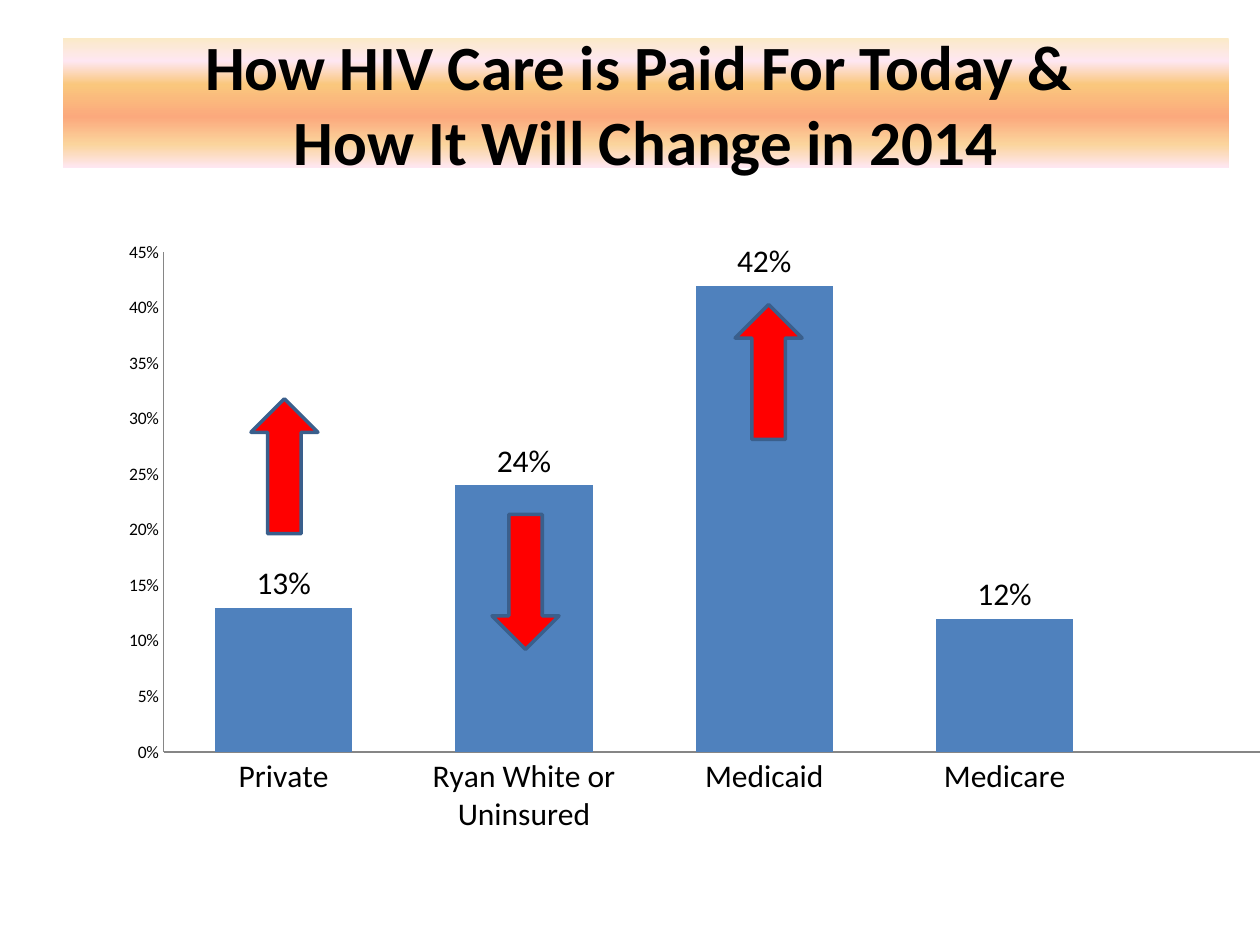
import pptx
import pptx.util
import pptx.chart.data
import pptx.dml.color
import pptx.enum.chart
import pptx.enum.shapes
import pptx.enum.text
import pptx.oxml
import pptx.oxml.ns

Cm = pptx.util.Cm
Pt = pptx.util.Pt
qn = pptx.oxml.ns.qn


def paint(color_format, hex_color):
    color_format.rgb = pptx.dml.color.RGBColor.from_string(hex_color)


deck = pptx.Presentation()
deck.slide_width = Cm(25.4)
deck.slide_height = Cm(19.05)
page = deck.slides.add_slide(deck.slide_layouts[5])

title = page.shapes.title
title.left, title.top, title.width, title.height = Cm(1.27), Cm(0.76), Cm(23.5), Cm(2.62)
title.text_frame.text = "How HIV Care is Paid For Today & \vHow It Will Change in 2014"
title.text_frame.auto_size = pptx.enum.text.MSO_AUTO_SIZE.NONE
title.text_frame.vertical_anchor = pptx.enum.text.MSO_ANCHOR.MIDDLE
para = title.text_frame.paragraphs[0]
para.alignment = pptx.enum.text.PP_ALIGN.CENTER
for span in para.runs:
    span.font.name = "Calibri"
    span.font.size = Pt(36)
    span.font.bold = True
    paint(span.font.color, "000000")

gradient = [(0, "FBEAC7"), (18, "FEE7F2"), (36, "FAC77D"),
            (61, "FBA97D"), (82, "FBD49C"), (100, "FEE7F2")]
title.fill.gradient()
gradient_fill = title._element.spPr.find(qn("a:gradFill"))
stops = "".join(
    f'<a:gs pos="{percent * 1000}"><a:srgbClr val="{color}"/></a:gs>'
    for percent, color in gradient
)
new_fill = pptx.oxml.parse_xml(
    f'<a:gradFill {pptx.oxml.ns.nsdecls("a")} rotWithShape="1"><a:gsLst>{stops}</a:gsLst>'
    '<a:lin ang="5400000" scaled="0"/></a:gradFill>'
)
gradient_fill.getparent().replace(gradient_fill, new_fill)

payers = pptx.chart.data.CategoryChartData(number_format="0%")
payers.categories = ["Private", "Ryan White or Uninsured", "Medicaid", "Medicare", ""]
payers.add_series("Series 1", [0.13, 0.24, 0.42, 0.12, None])
chart = page.shapes.add_chart(
    pptx.enum.chart.XL_CHART_TYPE.COLUMN_CLUSTERED,
    Cm(2.13), Cm(4.7), Cm(25.4), Cm(13.84), payers,
).chart
chart.has_title = False
chart.has_legend = False
chart.font.name = "Calibri"
chart.font.size = Pt(10)
paint(chart.font.color, "000000")

for axis, size in [(chart.category_axis, 18), (chart.value_axis, 10)]:
    axis.has_major_gridlines = False
    axis.major_tick_mark = pptx.enum.chart.XL_TICK_MARK.NONE
    axis.minor_tick_mark = pptx.enum.chart.XL_TICK_MARK.NONE
    axis.tick_labels.font.size = Pt(size)
    axis.format.line.width = Pt(0.75)
    paint(axis.format.line.color, "868686")
chart.value_axis.minimum_scale = 0
chart.value_axis.maximum_scale = 0.45
chart.value_axis.major_unit = 0.05
chart.value_axis.tick_labels.number_format = "0%"
chart.value_axis.tick_labels.number_format_is_linked = False

plot = chart.plots[0]
plot.gap_width = 75
plot.overlap = -9
plot.vary_by_categories = False
bars = plot.series[0]
bars.format.fill.solid()
paint(bars.format.fill.fore_color, "4F81BD")
labels = bars.data_labels
labels.show_value = True
labels.number_format = "0%"
labels.number_format_is_linked = False
labels.position = pptx.enum.chart.XL_LABEL_POSITION.OUTSIDE_END
labels.font.size = Pt(18)

plot_area = chart._chartSpace.chart.plotArea
for old_layout in plot_area.findall(qn("c:layout")):
    plot_area.remove(old_layout)
plot_area.insert(0, pptx.oxml.parse_xml(
    f'<c:layout {pptx.oxml.ns.nsdecls("c")}><c:manualLayout><c:layoutTarget val="inner"/>'
    '<c:xMode val="edge"/><c:yMode val="edge"/><c:x val="0.046"/><c:y val="0.028"/>'
    '<c:w val="0.954"/><c:h val="0.728"/></c:manualLayout></c:layout>'
))

up = pptx.enum.shapes.MSO_SHAPE.UP_ARROW
down = pptx.enum.shapes.MSO_SHAPE.DOWN_ARROW
for direction, left, top in [(up, 5.06, 8.04), (down, 9.92, 10.37), (up, 14.82, 6.14)]:
    arrow = page.shapes.add_shape(direction, Cm(left), Cm(top), Cm(1.35), Cm(2.72))
    arrow.shadow.inherit = False
    arrow.fill.solid()
    paint(arrow.fill.fore_color, "FF0000")
    arrow.line.width = Pt(2)
    paint(arrow.line.color, "3A5F8C")

deck.save("out.pptx")
